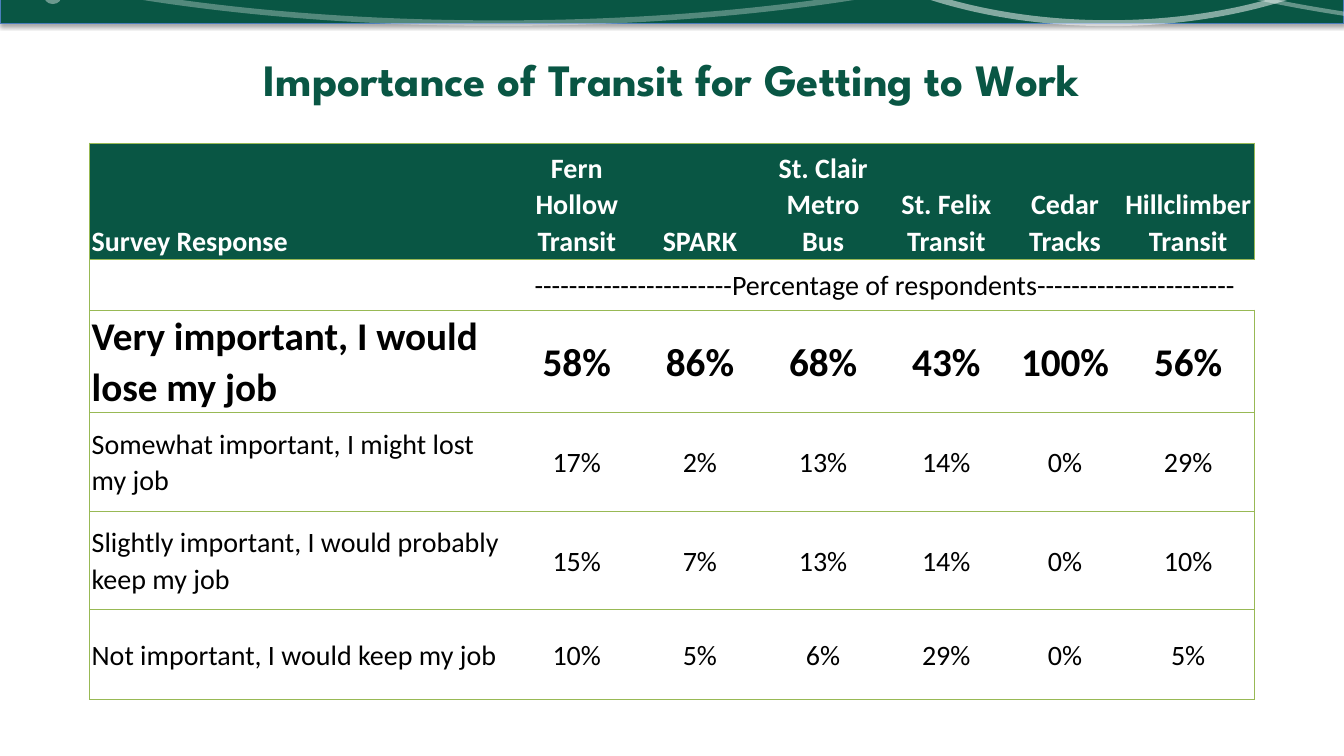
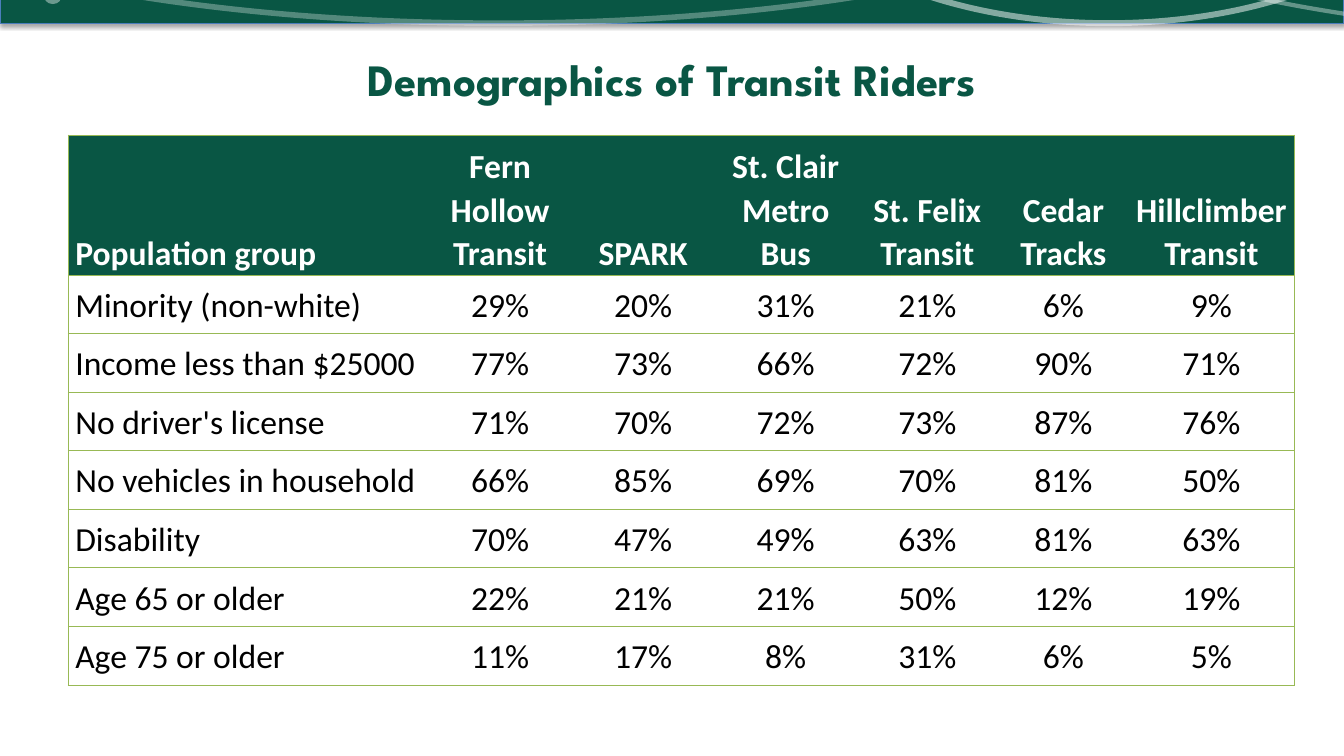
from lxml.etree import SubElement as Sub
from pptx import Presentation
from pptx.dml.color import RGBColor
from pptx.enum.shapes import MSO_SHAPE as Form
from pptx.enum.text import MSO_ANCHOR as Anchor, PP_ALIGN as Align
from pptx.oxml import parse_xml
from pptx.oxml.ns import nsdecls, qn
from pptx.util import Pt

UNIT = Pt(8)
WIDE, HIGH = 120, 67.5
GREEN, LIME, BLUE = "095644", "98B955", "4B7EBC"
WHITE, BLACK = "FFFFFF", "000000"
PLAIN = "{2D5ABB26-0587-4C30-8999-92F81FD0307C}"


def grid(*spans):
    return [round(span * UNIT) for span in spans]


def paint(fill, tone, alpha=100):
    fill.solid()
    fill.fore_color.rgb = RGBColor.from_string(tone)
    if alpha < 100:
        node = fill._xPr.find(qn("a:solidFill"))[0]
        Sub(node, qn("a:alpha"), val=str(alpha * 1000))


names = ["Fern Hollow Transit", "SPARK", "St. Clair Metro Bus",
         "St. Felix Transit", "Cedar Tracks", "Hillclimber Transit"]
dash = "-" * 23

pages = [
    dict(
        title="Importance of Transit for Getting to Work",
        spot=(8, 12.78), size=20, inset=Pt(1.5), bold=2,
        cols=[38, 11, 11, 11, 11, 10.2, 11.8],
        rows=[10.35, 4.55, 8.8, 8.8, 8.8, 8],
        data=[
            ["Survey Response", *names],
            ["", f"{dash}Percentage of respondents{dash}"],
            ["Very important, I would lose my job", 58, 86, 68, 43, 100, 56],
            ["Somewhat important, I might lost my job", 17, 2, 13, 14, 0, 29],
            ["Slightly important, I would probably keep my job",
             15, 7, 13, 14, 0, 10],
            ["Not important, I would keep my job", 10, 5, 6, 29, 0, 5],
        ],
    ),
    dict(
        title="Demographics of Transit Riders",
        spot=(6.1, 12.06), size=24, inset=Pt(5), bold=None,
        cols=[32.2, 12.7, 12.85, 12.6, 12.7, 11.6, 14.85],
        rows=[12.5] + [5.23] * 7,
        data=[
            ["Population group", *names],
            ["Minority (non-white)", 29, 20, 31, 21, 6, 9],
            ["Income less than $25000", 77, 73, 66, 72, 90, 71],
            ["No driver's license", 71, 70, 72, 73, 87, 76],
            ["No vehicles in household", 66, 85, 69, 70, 81, 50],
            ["Disability", 70, 47, 49, 63, 81, 63],
            ["Age 65 or older", 22, 21, 21, 50, 12, 19],
            ["Age 75 or older", 11, 17, 8, 31, 6, 5],
        ],
    ),
]

deck = Presentation()
deck.slide_width, deck.slide_height = grid(WIDE, HIGH)
layout = deck.slide_layouts.get_by_name("Title Only")
slides = [deck.slides.add_slide(layout) for page in pages]

decor = [
    (Form.RECTANGLE, (0, -1.5, WIDE, 3.6), (GREEN, 100), (BLUE, 100, 0.75)),
    (Form.OVAL, (-20, -33.75, 129, 35.82), None, (WHITE, 30, 4)),
    (Form.OVAL, (69, -28.8, 60, 30.87), None, (WHITE, 50, 4.25)),
    (Form.OVAL, (94.41, -22.5, 125.64, 26.28), None, (WHITE, 37, 3)),
    (Form.OVAL, (4, -0.72, 1.44, 1.08), (WHITE, 40), None),
]
for place, (form, box, fill, line) in enumerate(decor, 2):
    shape = slides[0].shapes.add_shape(form, *grid(*box))
    shape.shadow.inherit = False
    if fill:
        paint(shape.fill, *fill)
    else:
        shape.fill.background()
    if line:
        tone, alpha, width = line
        shape.line.width = Pt(width)
        paint(shape.line.fill, tone, alpha)
    else:
        shape.line.fill.background()
    if form == Form.RECTANGLE:
        glow = shape._element.spPr.find(qn("a:effectLst"))
        glow.append(parse_xml(
            f'<a:outerShdw {nsdecls("a")} blurRad="{Pt(3.1)}" dist="{Pt(1.8)}" '
            f'dir="5400000" rotWithShape="0"><a:srgbClr val="{BLACK}">'
            '<a:alpha val="35000"/></a:srgbClr></a:outerShdw>'))
    layout.shapes._spTree.insert(place, shape._element)

for slide, page in zip(slides, pages):
    title = slide.shapes.title
    title.left, title.top, title.width, title.height = grid(8, 4.5, 104, 5)
    title.text_frame.text = page["title"]
    para = title.text_frame.paragraphs[0]
    para.alignment = Align.CENTER
    para.font.name, para.font.size, para.font.bold = "League Spartan", Pt(32), True
    paint(para.font.fill, GREEN)

    cols, rows, data = page["cols"], page["rows"], page["data"]
    box = grid(*page["spot"], sum(cols), sum(rows))
    table = slide.shapes.add_table(len(rows), len(cols), *box).table
    table.horz_banding = False
    table._tbl.tblPr[0].text = PLAIN
    for col, width in zip(table.columns, grid(*cols)):
        col.width = width
    for row, height in zip(table.rows, grid(*rows)):
        row.height = height

    for r, items in enumerate(data):
        head, key = r == 0, r == page["bold"]
        for c in range(len(cols)):
            cell = table.cell(r, c)
            cell.margin_left = cell.margin_right = page["inset"]
            cell.margin_top = cell.margin_bottom = 0
            cell.vertical_anchor = Anchor.BOTTOM if head else Anchor.MIDDLE
            if head:
                paint(cell.fill, GREEN)
            else:
                cell.fill.background()
            sides = [("L", c == 0), ("R", c == len(cols) - 1), ("T", True), ("B", True)]
            for i, (side, drawn) in enumerate(sides):
                ink = f'<a:solidFill><a:srgbClr val="{LIME}"/></a:solidFill>'
                cell._tc.tcPr.insert(i, parse_xml(
                    f'<a:ln{side} {nsdecls("a")} w="{Pt(0.75)}">'
                    f'{ink if drawn else "<a:noFill/>"}</a:ln{side}>'))
            para = cell.text_frame.paragraphs[0]
            para.line_spacing = 1.07
            para.alignment = Align.CENTER if c else Align.LEFT
            if c < len(items):
                item = items[c]
                para.text = f"{item}%" if isinstance(item, int) else item
            para.font.name, para.font.bold = "Calibri", head or key
            para.font.size = Pt(28 if key else page["size"])
            paint(para.font.fill, WHITE if head else BLACK)
        if len(items) < len(cols):
            table.cell(r, len(items) - 1).merge(table.cell(r, len(cols) - 1))

deck.save("out.pptx")
